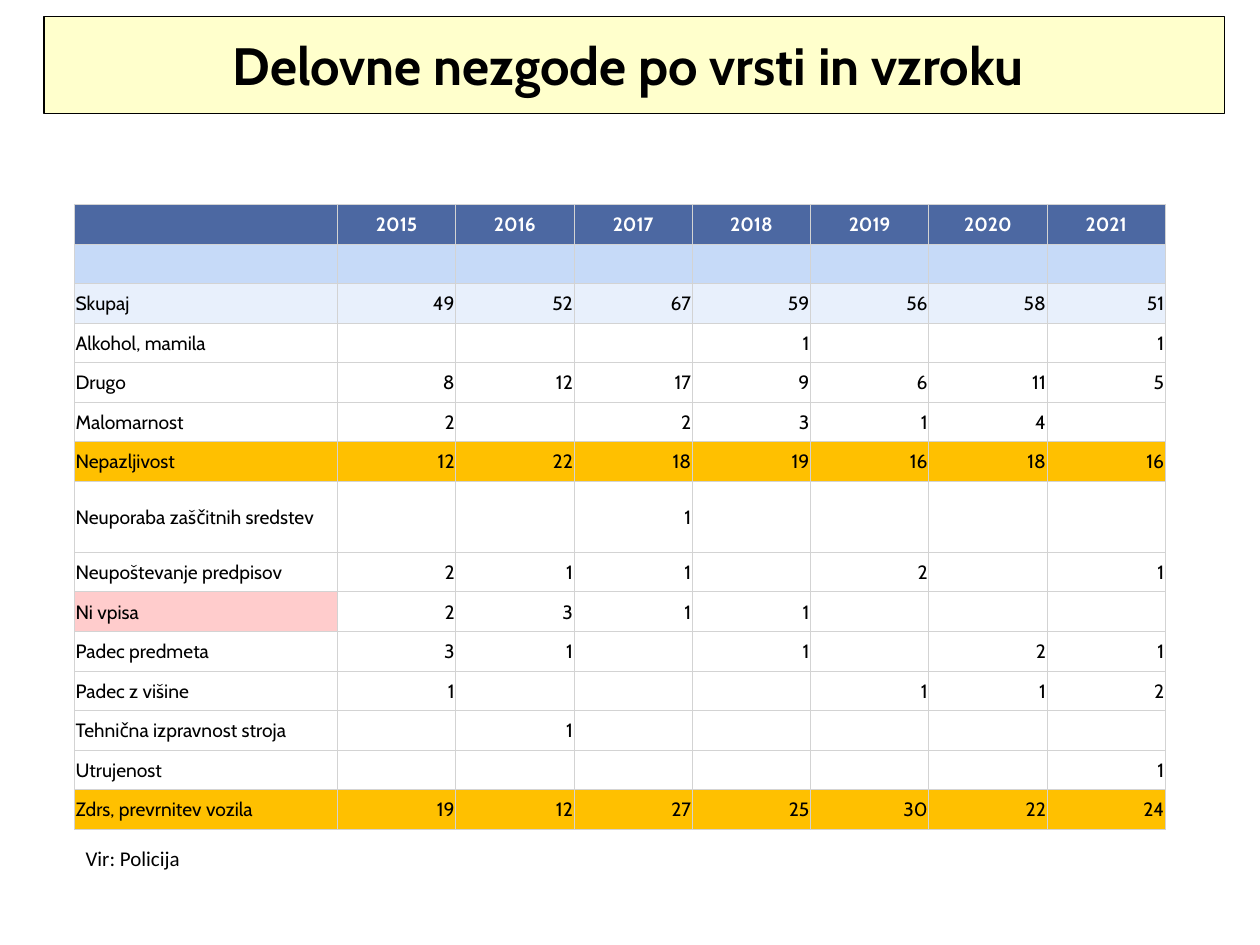
import lxml.etree
import pptx
import pptx.dml.color
import pptx.enum.text
import pptx.oxml.ns
import pptx.util

Pt = pptx.util.Pt
RGBColor = pptx.dml.color.RGBColor
Align = pptx.enum.text.PP_ALIGN
Anchor = pptx.enum.text.MSO_ANCHOR
qn = pptx.oxml.ns.qn

BLACK = RGBColor(0x00, 0x00, 0x00)
WHITE = RGBColor(0xFF, 0xFF, 0xFF)
YELLOW = RGBColor(0xFF, 0xFF, 0x00)
HEADER_BLUE = RGBColor(0x4C, 0x68, 0xA2)
SPACER_BLUE = RGBColor(0xC6, 0xDA, 0xF8)
TOTAL_BLUE = RGBColor(0xE8, 0xF0, 0xFC)
ORANGE = RGBColor(0xFF, 0xC0, 0x00)
PINK = RGBColor(0xFF, 0xCC, 0xCC)
GRID_GRAY = RGBColor(0xD3, 0xD3, 0xD3)

TABLE_ROWS = [
    ["", 2015, 2016, 2017, 2018, 2019, 2020, 2021],
    [""] * 8,
    ["Skupaj", 49, 52, 67, 59, 56, 58, 51],
    ["Alkohol, mamila", "", "", "", 1, "", "", 1],
    ["Drugo", 8, 12, 17, 9, 6, 11, 5],
    ["Malomarnost", 2, "", 2, 3, 1, 4, ""],
    ["Nepazljivost", 12, 22, 18, 19, 16, 18, 16],
    ["Neuporaba zaščitnih sredstev", "", "", 1, "", "", "", ""],
    ["Neupoštevanje predpisov", 2, 1, 1, "", 2, "", 1],
    ["Ni vpisa", 2, 3, 1, 1, "", "", ""],
    ["Padec predmeta", 3, 1, "", 1, "", 2, 1],
    ["Padec z višine", 1, "", "", "", 1, 1, 2],
    ["Tehnična izpravnost stroja", "", 1, "", "", "", "", ""],
    ["Utrujenost", "", "", "", "", "", "", 1],
    ["Zdrs, prevrnitev vozila", 19, 12, 27, 25, 30, 22, 24],
]
ROW_FILLS = {0: HEADER_BLUE, 1: SPACER_BLUE, 2: TOTAL_BLUE, 6: ORANGE, 14: ORANGE}
CELL_FILLS = {(9, 0): PINK}
TALL_ROW = 7

LABEL_WIDTH, YEAR_WIDTH = 150.4, 67.6
ROW_HEIGHT, TALL_ROW_HEIGHT = 22.6, 40.7


def set_attributes(target, values):
    for name, value in values.items():
        setattr(target, name, value)


def place(shape, left, top, width, height):
    set_attributes(shape, {"left": Pt(left), "top": Pt(top),
                           "width": Pt(width), "height": Pt(height)})


def write_text(paragraph, text, color, **font_values):
    run = paragraph.add_run()
    run.text = text
    set_attributes(run.font, font_values)
    run.font.color.rgb = color


def set_opacity(fill_properties, percent):
    color = fill_properties.find(qn("a:solidFill"))[0]
    lxml.etree.SubElement(color, qn("a:alpha")).set("val", str(percent * 1000))


def set_borders(cell, color, width):
    """Draw all four cell sides; they must precede the fill in the cell XML."""
    properties = cell._tc.get_or_add_tcPr()
    for index, side in enumerate(("a:lnL", "a:lnR", "a:lnT", "a:lnB")):
        line = lxml.etree.Element(qn(side), w=str(Pt(width)))
        fill = lxml.etree.SubElement(line, qn("a:solidFill"))
        lxml.etree.SubElement(fill, qn("a:srgbClr"), val=str(color))
        properties.insert(index, line)


def add_title(slide, text):
    title = slide.shapes.title
    place(title, 25.2, 9.4, 674.6, 55.4)
    title.fill.solid()
    title.fill.fore_color.rgb = YELLOW
    set_opacity(title._element.spPr, 20)
    title.line.color.rgb = BLACK
    title.line.width = Pt(0.75)
    set_attributes(title.text_frame, {"vertical_anchor": Anchor.MIDDLE, "word_wrap": True})
    paragraph = title.text_frame.paragraphs[0]
    paragraph.alignment = Align.CENTER
    write_text(paragraph, text, BLACK, name="Cabin", size=Pt(30), bold=True)


def format_cell(cell, text, row_index, column_index):
    fill = CELL_FILLS.get((row_index, column_index), ROW_FILLS.get(row_index))
    if fill is None:
        cell.fill.background()
    else:
        cell.fill.solid()
        cell.fill.fore_color.rgb = fill
    set_borders(cell, GRID_GRAY, 0.5)
    set_attributes(cell, {"vertical_anchor": Anchor.MIDDLE, "margin_left": Pt(0.7),
                          "margin_right": Pt(0.7), "margin_top": Pt(0.7),
                          "margin_bottom": Pt(0)})
    is_header = row_index == 0
    paragraph = cell.text_frame.paragraphs[0]
    if text == "":
        # A small end mark keeps an empty cell from stretching its row.
        paragraph._p.get_or_add_endParaRPr().set("sz", "1100")
        return
    if is_header:
        paragraph.alignment = Align.CENTER
    else:
        paragraph.alignment = Align.RIGHT if column_index else Align.LEFT
    write_text(paragraph, str(text), WHITE if is_header else BLACK,
               name="Cabin", size=Pt(11), bold=is_header)


def add_accident_table(slide):
    row_count, column_count = len(TABLE_ROWS), len(TABLE_ROWS[0])
    width = LABEL_WIDTH + (column_count - 1) * YEAR_WIDTH
    height = (row_count - 1) * ROW_HEIGHT + TALL_ROW_HEIGHT
    table = slide.shapes.add_table(row_count, column_count, Pt(42.5), Pt(116.8),
                                   Pt(width), Pt(height)).table
    set_attributes(table, {"first_row": False, "horz_banding": False})
    for index, column in enumerate(table.columns):
        column.width = Pt(YEAR_WIDTH if index else LABEL_WIDTH)
    for row_index, values in enumerate(TABLE_ROWS):
        row = table.rows[row_index]
        row.height = Pt(TALL_ROW_HEIGHT if row_index == TALL_ROW else ROW_HEIGHT)
        for column_index, value in enumerate(values):
            format_cell(row.cells[column_index], value, row_index, column_index)


def add_source_note(slide, text):
    note = slide.shapes.add_textbox(Pt(41.8), Pt(479.5), Pt(79.2), Pt(21.6))
    set_attributes(note.text_frame, {
        "word_wrap": True,
        "auto_size": pptx.enum.text.MSO_AUTO_SIZE.SHAPE_TO_FIT_TEXT})
    write_text(note.text_frame.paragraphs[0], text, BLACK, name="Calibri", size=Pt(12))


def main():
    presentation = pptx.Presentation()
    set_attributes(presentation, {"slide_width": Pt(720), "slide_height": Pt(540)})
    slide = presentation.slides.add_slide(presentation.slide_layouts[5])
    add_title(slide, "Delovne nezgode po vrsti in vzroku ")
    add_accident_table(slide)
    add_source_note(slide, "Vir: Policija")
    presentation.save("out.pptx")


if __name__ == "__main__":
    main()
